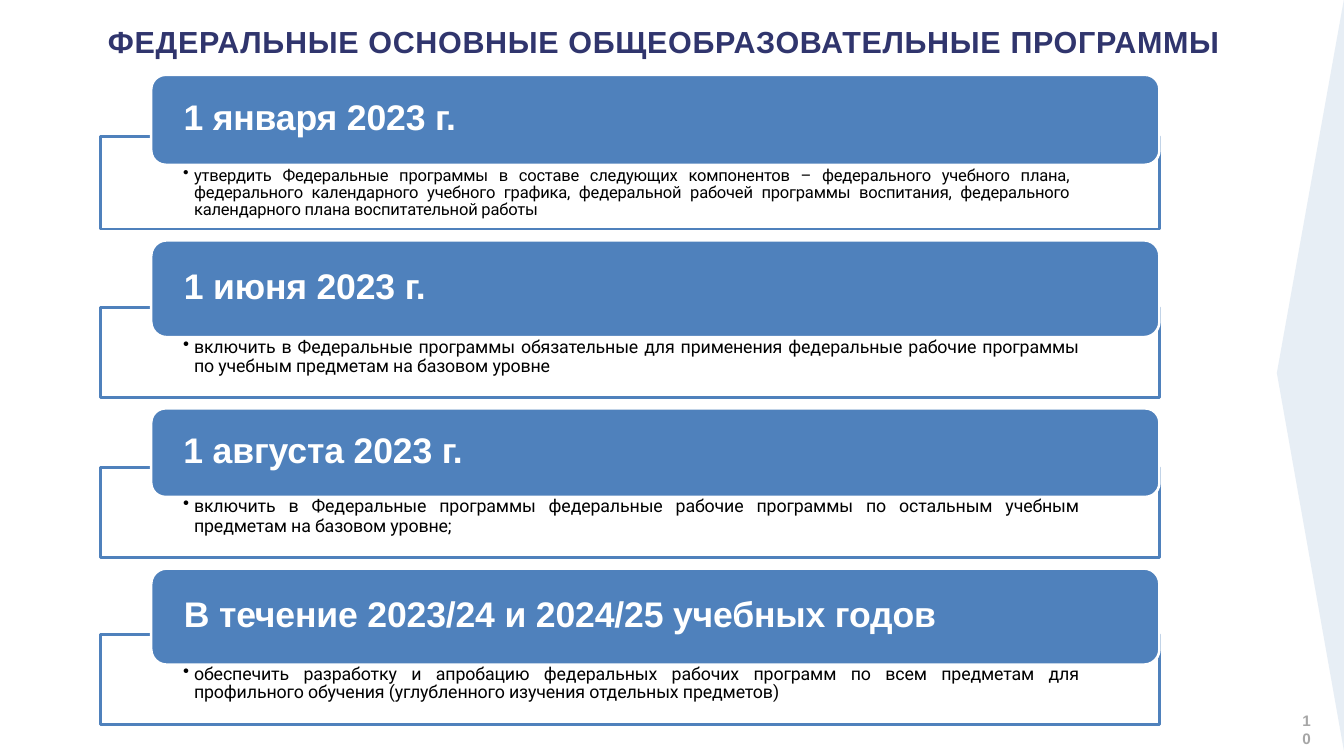
from collections import namedtuple
from dataclasses import dataclass

from lxml.etree import SubElement
from pptx import Presentation
from pptx.dml.color import RGBColor as Rgb
from pptx.enum.shapes import MSO_SHAPE as Preset
from pptx.enum.text import MSO_ANCHOR as Anchor, PP_ALIGN as Align
from pptx.oxml.ns import qn
from pptx.util import Cm, Pt

Box = namedtuple("Box", "left top width height")
Stage = namedtuple("Stage", "top height bar frame gap inset size leading date task")


@dataclass(frozen=True)
class Theme:
    navy: Rgb = Rgb.from_string("30356D")
    blue: Rgb = Rgb.from_string("4F81BC")
    pale: Rgb = Rgb.from_string("DCE6F1")
    gray: Rgb = Rgb.from_string("A6A6A6")
    white: Rgb = Rgb.from_string("FFFFFF")
    black: Rgb = Rgb.from_string("000000")
    title_size: float = 24
    date_size: float = 28
    page_size: float = 12
    line: float = 2
    head_font: str = "Arial"
    task_font: str = "Roboto"


THEME = Theme()

STAGES = [
    Stage(2.08, 4.29, 2.5, 2.58, 0.07, 0.28, 13, 13.4, "1 января 2023 г.",
          "утвердить Федеральные программы в составе следующих компонентов – "
          "федерального учебного плана, федерального календарного учебного графика, "
          "федеральной рабочей программы воспитания, федерального календарного плана "
          "воспитательной работы"),
    Stage(6.68, 4.37, 2.69, 2.5, 0.05, 0, 14, 14.5, "1 июня 2023 г.",
          "включить в Федеральные программы обязательные для применения федеральные "
          "рабочие программы по учебным предметам на базовом уровне"),
    Stage(11.35, 4.14, 2.46, 2.5, -0.03, 0, 14, 15.7, "1 августа 2023 г.",
          "включить в Федеральные программы федеральные рабочие программы по остальным "
          "учебным предметам на базовом уровне;"),
    Stage(15.8, 4.33, 2.67, 2.5, 0.02, 0, 14, 14.5,
          "В течение 2023/24 и 2024/25 учебных годов",
          "обеспечить разработку и апробацию федеральных рабочих программ по всем "
          "предметам для профильного обучения (углубленного изучения отдельных предметов)"),
]


def apply(target, values):
    for name, value in values.items():
        setattr(target, name, value)


def write(frame, text, font, color, spacing=0, paragraph_format=None, **margins):
    apply(frame, {"word_wrap": True, "margin_left": 0, "margin_top": 0,
                  "margin_right": 0, "margin_bottom": 0, **margins})
    paragraph = frame.paragraphs[0]
    paragraph.text = text
    apply(paragraph, {"alignment": Align.LEFT, **(paragraph_format or {})})
    for run in paragraph.runs:
        apply(run.font, font)
        run.font.color.rgb = color
        run.font._element.set("spc", str(round(spacing * 100)))
    return paragraph


def add_text(slide, box, *content, **options):
    area = slide.shapes.add_textbox(*map(Cm, box))
    return write(area.text_frame, *content, **options)


def add_bullet(paragraph):
    properties = paragraph._p.get_or_add_pPr()
    indents = {"marL": Cm(0.36), "indent": -Cm(0.3)}
    for name, length in indents.items():
        properties.set(name, str(length))
    SubElement(properties, qn("a:buChar")).set("char", "•")


def add_panel(slide, preset, box, fill, outline):
    panel = slide.shapes.add_shape(preset, *map(Cm, box))
    panel.shadow.inherit = False
    if fill is None:
        panel.fill.background()
    else:
        panel.fill.solid()
        panel.fill.fore_color.rgb = fill
    panel.line.color.rgb = outline
    panel.line.width = Pt(THEME.line)
    return panel


def add_title(slide, box):
    font = {"name": THEME.head_font, "size": Pt(THEME.title_size), "bold": True}
    add_text(slide, box, "ФЕДЕРАЛЬНЫЕ ОСНОВНЫЕ ОБЩЕОБРАЗОВАТЕЛЬНЫЕ ПРОГРАММЫ",
             font, THEME.navy, 0.55)


def add_stage(slide, box, stage):
    frame_top = box.top + box.height - stage.frame
    add_panel(slide, Preset.RECTANGLE, Box(box.left, frame_top, box.width, stage.frame),
              None, THEME.blue)

    task_box = Box(box.left + 2.24, box.top + stage.bar + stage.gap, 24.93, 1.4)
    task = add_text(slide, task_box, stage.task,
                    {"name": THEME.task_font, "size": Pt(stage.size)}, THEME.black, -0.13,
                    paragraph_format={"alignment": Align.JUSTIFY,
                                      "line_spacing": Pt(stage.leading)},
                    margin_right=Cm(stage.inset))
    add_bullet(task)

    bar = add_panel(slide, Preset.ROUNDED_RECTANGLE,
                    Box(box.left + 1.41, box.top, box.width - 1.41, stage.bar),
                    THEME.blue, THEME.white)
    bar.adjustments[0] = 0.16
    write(bar.text_frame, stage.date,
          {"name": THEME.head_font, "size": Pt(THEME.date_size), "bold": True},
          THEME.white, -0.1, vertical_anchor=Anchor.MIDDLE,
          margin_left=Cm(0.78), margin_bottom=Cm(0.2))


def add_side_wedge(slide, box):
    right = box.left + box.width
    outline = slide.shapes.build_freeform(Cm(right), Cm(box.top))
    outline.add_line_segments([(Cm(box.left), Cm(box.top + box.height / 2 - 0.06)),
                               (Cm(right), Cm(box.top + box.height))])
    wedge = outline.convert_to_shape()
    wedge.shadow.inherit = False
    wedge.fill.solid()
    wedge.fill.fore_color.rgb = THEME.pale
    wedge.line.fill.background()
    color = wedge._element.spPr.find(qn("a:solidFill"))[0]
    SubElement(color, qn("a:alpha")).set("val", "68000")


def add_page_number(slide, box):
    font = {"name": THEME.head_font, "size": Pt(THEME.page_size), "bold": True}
    add_text(slide, box, "10", font, THEME.gray,
             paragraph_format={"line_spacing": Pt(14.2)})


def main():
    deck = Presentation()
    apply(deck, {"slide_width": Pt(1058), "slide_height": Pt(595.5)})
    slide = deck.slides.add_slide(deck.slide_layouts[6])
    add_title(slide, Box(3, 0.63, 31.35, 1.05))
    for stage in STAGES:
        add_stage(slide, Box(2.79, stage.top, 29.41, stage.height), stage)
    add_side_wedge(slide, Box(35.46, 0, 1.86, 20.85))
    add_page_number(slide, Box(36.17, 19.76, 0.36, 1))
    deck.save("out.pptx")


if __name__ == "__main__":
    main()
